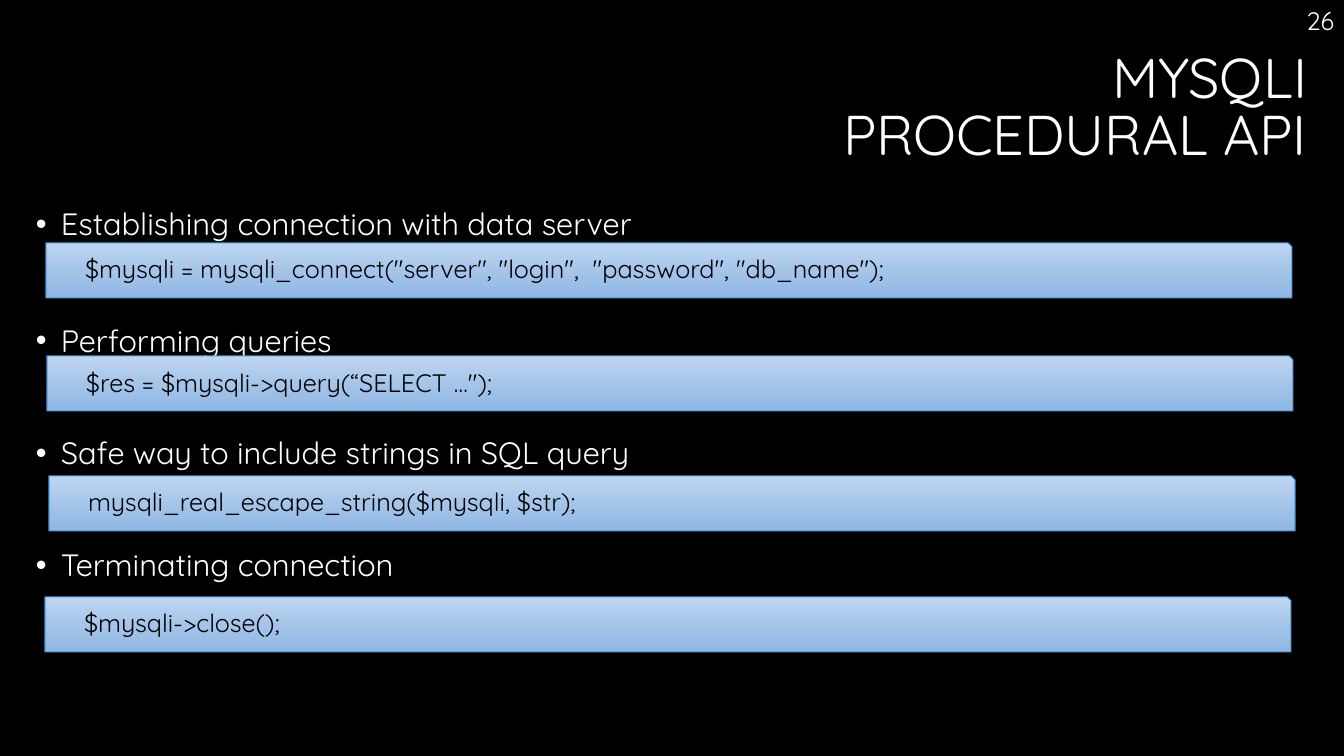
"""Build the slide on the MySQLi procedural API."""
from copy import deepcopy

from pptx import Presentation
from pptx.dml.color import RGBColor
from pptx.enum.shapes import MSO_SHAPE
from pptx.enum.text import MSO_ANCHOR, PP_ALIGN
from pptx.oxml import parse_xml
from pptx.oxml.ns import nsdecls, qn
from pptx.util import Emu, Pt

TITLE_LINES = ["MYSQLI", "PROCEDURAL API"]
PAGE_NUMBER = "26"
STEPS = [
    ("Establishing connection with data server", 10),
    ("Performing queries", 59.5),
    ("Safe way to include strings in SQL query", 56.5),
    ("Terminating connection", 56.5),
]
CODE_BARS = [
    ('$mysqli = mysqli_connect("server", "login",  "password", "db_name");', 46, 243),
    ('$res = $mysqli->query(“SELECT …");', 47, 356),
    ("mysqli_real_escape_string($mysqli, $str);", 49, 476),
    ("$mysqli->close();", 45, 597),
]
BAR_WIDTH, BAR_HEIGHT = 1246, 55
COLORS = {"background": "000000", "text": "FFFFFF", "code": "000000", "border": "4A9BDC"}
BAR_GRADIENT = {0: "BFD6F2", 0.52: "A4C4E9", 1: "8FB7E4"}
FONT = "Quicksand"


def px(length):
    return Emu(round(length * 914400 / 100.8))


def rgb(name):
    return RGBColor.from_string(COLORS[name])


def add_run(paragraph, text, size, color="text"):
    run = paragraph.add_run()
    run.text = text
    run.font.name, run.font.size = FONT, Pt(size)
    run.font.color.rgb = rgb(color)


def add_text_frame(slide, left, top, width, height):
    frame = slide.shapes.add_textbox(px(left), px(top), px(width), px(height)).text_frame
    frame.word_wrap = True
    return frame


def add_title(slide):
    heading = add_text_frame(slide, 26, 47, 1291, 142).paragraphs[0]
    heading.alignment, heading.line_spacing = PP_ALIGN.RIGHT, 0.86
    for index, line in enumerate(TITLE_LINES):
        if index:
            heading.add_line_break()
        add_run(heading, line, 40)


def add_page_number(slide):
    number = add_text_frame(slide, 1053, 0, 291, 40).paragraphs[0]
    number.alignment = PP_ALIGN.RIGHT
    add_run(number, PAGE_NUMBER, 18)


def add_steps(slide):
    frame = add_text_frame(slide, 26, 204, 1291, 507)
    for index, (step, space_before) in enumerate(STEPS):
        paragraph = frame.add_paragraph() if index else frame.paragraphs[0]
        paragraph.line_spacing, paragraph.space_before = 0.9, Pt(space_before)
        properties = paragraph._p.get_or_add_pPr()
        properties.set("marL", str(px(25)))
        properties.set("indent", str(-px(25)))
        properties.append(parse_xml(f'<a:buFont {nsdecls("a")} typeface="Arial"/>'))
        properties.append(parse_xml(f'<a:buChar {nsdecls("a")} char="•"/>'))
        add_run(paragraph, step, 22)


def add_code_bar(slide, code, left, top):
    bar = slide.shapes.add_shape(
        MSO_SHAPE.SNIP_1_RECTANGLE, px(left), px(top), px(BAR_WIDTH), px(BAR_HEIGHT))
    bar.adjustments[0] = 0.07
    bar.shadow.inherit = False
    bar.line.color.rgb, bar.line.width = rgb("border"), Pt(0.75)
    bar.fill.gradient()
    bar.fill.gradient_angle = 270
    stops = bar._element.spPr.find(".//" + qn("a:gsLst"))
    stops.insert(1, deepcopy(stops[0]))
    for stop, (position, color) in zip(bar.fill.gradient_stops, BAR_GRADIENT.items()):
        stop.position, stop.color.rgb = position, RGBColor.from_string(color)
    frame = bar.text_frame
    frame.word_wrap, frame.vertical_anchor = True, MSO_ANCHOR.MIDDLE
    frame.margin_left, frame.margin_top = px(39), 0
    frame.margin_right, frame.margin_bottom = px(10), px(5)
    frame.paragraphs[0].alignment = PP_ALIGN.LEFT
    add_run(frame.paragraphs[0], code, 18, "code")


def main():
    deck = Presentation()
    deck.slide_width, deck.slide_height = px(1344), px(756)
    slide = deck.slides.add_slide(deck.slide_layouts[6])
    slide.background.fill.solid()
    slide.background.fill.fore_color.rgb = rgb("background")
    add_title(slide)
    add_page_number(slide)
    add_steps(slide)
    for code, left, top in CODE_BARS:
        add_code_bar(slide, code, left, top)
    deck.save("out.pptx")


if __name__ == "__main__":
    main()
